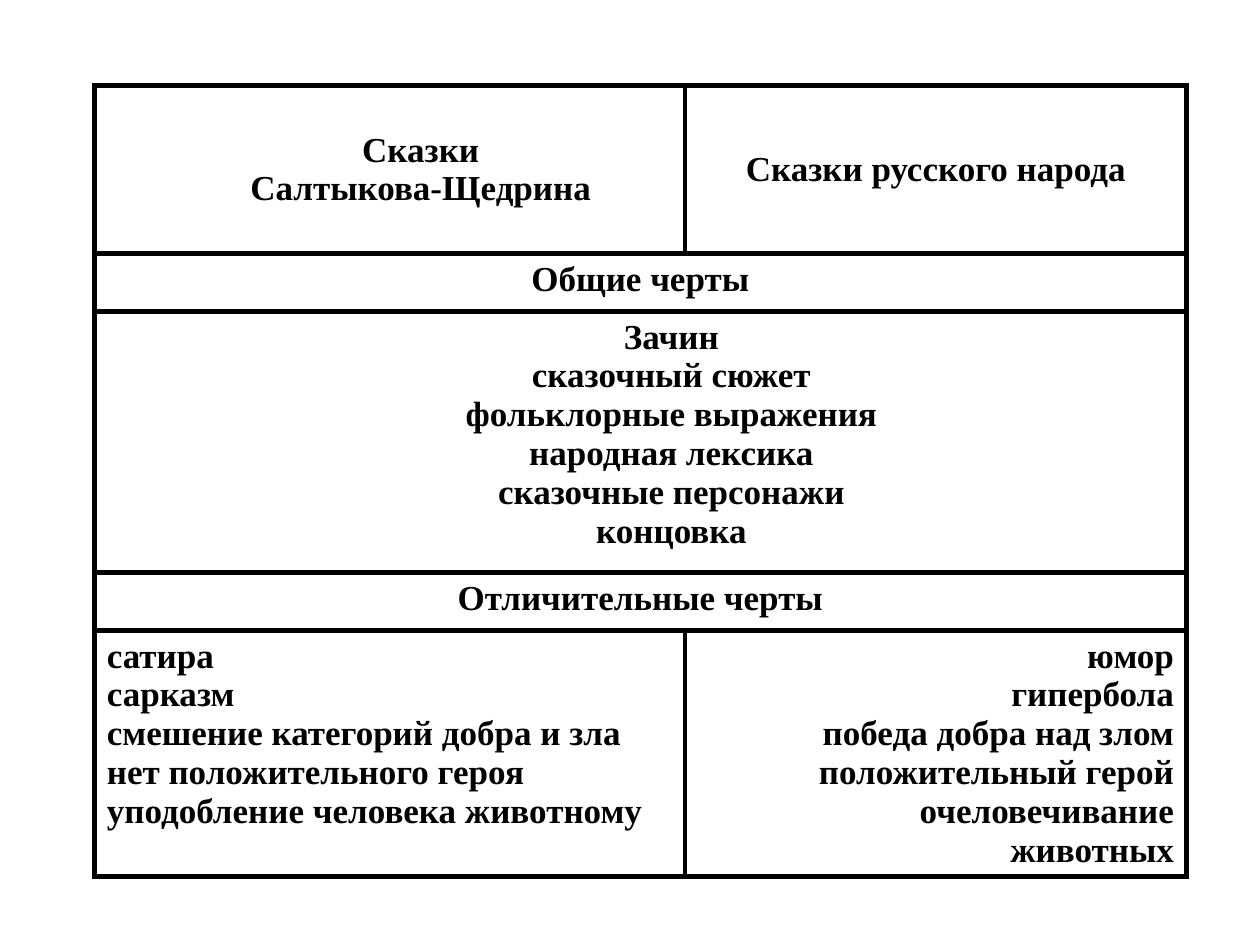
from lxml.etree import SubElement
from pptx import Presentation
from pptx.dml.color import RGBColor
from pptx.enum.text import MSO_ANCHOR, PP_ALIGN
from pptx.oxml.ns import qn
from pptx.util import Cm, Pt

COLORS = {"text": "000000", "border": "000000"}
FONT = "Times New Roman"
INDENT = Cm(1.25)
BORDER_WIDTH = Pt(3)

LEFT, TOP, FRAME_HEIGHT = Cm(1.9), Cm(1.73), Cm(16.38)
COLUMN_WIDTHS = [Cm(11.91), Cm(10.11)]
ROW_HEIGHTS = [Cm(3.38), Cm(1.17), Cm(5.26), Cm(1.17), Cm(4.42)]

CENTER, JUSTIFY, RIGHT = PP_ALIGN.CENTER, PP_ALIGN.JUSTIFY, PP_ALIGN.RIGHT

# Each cell: lines, format. A row with one cell spans both columns.
ROWS = [
    [
        (["Сказки", "Салтыкова-Щедрина"],
         {"align": CENTER, "indent": INDENT, "anchor": MSO_ANCHOR.MIDDLE}),
        (["Сказки русского народа"],
         {"align": CENTER, "anchor": MSO_ANCHOR.MIDDLE}),
    ],
    [(["Общие черты"], {"align": CENTER})],
    [
        (["Зачин", "сказочный сюжет", "фольклорные выражения",
          "народная лексика", "сказочные персонажи", "концовка"],
         {"align": CENTER, "indent": INDENT}),
    ],
    [(["Отличительные черты"], {"align": CENTER})],
    [
        (["сатира", "сарказм", "смешение категорий добра и зла",
          "нет положительного героя", "уподобление человека животному"],
         {"align": JUSTIFY}),
        (["юмор", "гипербола", "победа добра над злом",
          "положительный герой", "очеловечивание животных"],
         {"align": RIGHT, "indent": INDENT}),
    ],
]


def write_text(cell, lines, align, indent=0, anchor=MSO_ANCHOR.TOP, size=20):
    cell.vertical_anchor = anchor
    frame = cell.text_frame
    for index, line in enumerate(lines):
        paragraph = frame.add_paragraph() if index else frame.paragraphs[0]
        paragraph.alignment = align
        properties = paragraph._p.get_or_add_pPr()
        properties.set("marL", "0")
        properties.set("indent", str(int(indent)))
        run = paragraph.add_run()
        run.text = line
        run.font.name = FONT
        run.font.size = Pt(size)
        run.font.bold = True
        run.font.color.rgb = RGBColor.from_string(COLORS["text"])


def style_cell(cell):
    properties = cell._tc.get_or_add_tcPr()
    for side in ("lnL", "lnR", "lnT", "lnB"):
        line = SubElement(properties, qn(f"a:{side}"), w=str(int(BORDER_WIDTH)))
        fill = SubElement(line, qn("a:solidFill"))
        SubElement(fill, qn("a:srgbClr"), val=COLORS["border"])
    cell.fill.background()


def main():
    presentation = Presentation()
    presentation.slide_width, presentation.slide_height = Cm(25.4), Cm(19.05)
    slide = presentation.slides.add_slide(presentation.slide_layouts[6])

    shape = slide.shapes.add_table(
        len(ROWS), len(COLUMN_WIDTHS), LEFT, TOP,
        sum(COLUMN_WIDTHS), sum(ROW_HEIGHTS))
    table = shape.table
    table.first_row = False
    table.horz_banding = False
    for column, width in zip(table.columns, COLUMN_WIDTHS):
        column.width = width
    for row, height in zip(table.rows, ROW_HEIGHTS):
        row.height = height
    shape.height = FRAME_HEIGHT

    for cell in table.iter_cells():
        style_cell(cell)
    for row_index, row in enumerate(ROWS):
        if len(row) == 1:
            table.cell(row_index, 0).merge(table.cell(row_index, 1))
        for column_index, (lines, text_format) in enumerate(row):
            write_text(table.cell(row_index, column_index), lines, **text_format)

    presentation.save("out.pptx")


if __name__ == "__main__":
    main()
